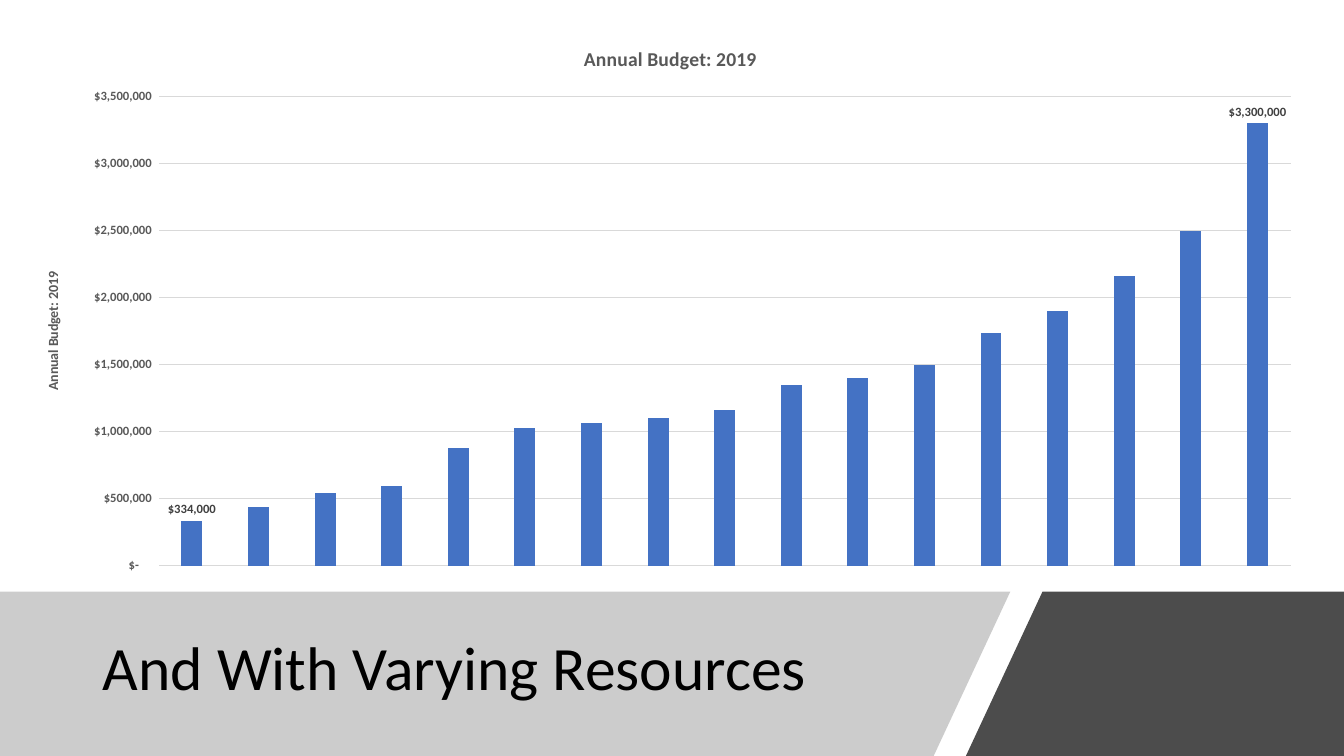
"""Build a slide with a column chart of annual budgets above a slanted title band."""
import lxml.etree
import pptx
import pptx.chart.data
import pptx.dml.color
import pptx.enum.chart
import pptx.enum.text
import pptx.oxml
import pptx.oxml.ns
import pptx.util

THEME = {
    "font": "Calibri",
    "title": "000000", "heading": "595959", "label": "404040",
    "grid": "D9D9D9", "bar": "4472C4", "light": "808080", "dark": "000000",
    "title_pt": 44, "heading_pt": 14, "axis_title_pt": 10, "tick_pt": 9,
}
RGB = pptx.dml.color.RGBColor.from_string
MONEY = r'_("$"* #,##0_);_("$"* \(#,##0\);_("$"* "-"??_);_(@_)'


def style(font, size, color, bold=False):
    font.name = THEME["font"]
    font.size = pptx.util.Pt(size)
    font.bold = bold
    font.color.rgb = RGB(color)


def write(tf, text, size, color, bold=False, align=None, spacing=None):
    p = tf.paragraphs[0]
    p.alignment = align
    p.line_spacing = spacing
    r = p.add_run()
    r.text = text
    style(r.font, size, color, bold)


prs = pptx.Presentation()
prs.slide_width = pptx.util.Inches(13.33)
prs.slide_height = pptx.util.Inches(7.5)
COL, ROW = prs.slide_width / 100, prs.slide_height / 100
s = prs.slides.add_slide(prs.slide_layouts[5])

TOP = 78.27
bands = [
    ("light", 40, [(0, TOP), (75.17, TOP), (69.47, 100), (0, 100)]),
    ("dark", 70, [(77.57, TOP), (100, TOP), (100, 100), (71.87, 100)]),
]
shapes = []
for color, opacity, corners in bands:
    points = [(int(x * COL), int(y * ROW)) for x, y in corners]
    builder = s.shapes.build_freeform(*points[0])
    builder.add_line_segments(points[1:], close=True)
    sp = builder.convert_to_shape()
    sp.shadow.inherit = False
    sp.line.fill.background()
    sp.fill.solid()
    sp.fill.fore_color.rgb = RGB(THEME[color])
    clr = sp.element.xpath("./p:spPr/a:solidFill/a:srgbClr")[0]
    alpha = lxml.etree.SubElement(clr, pptx.oxml.ns.qn("a:alpha"))
    alpha.set("val", str(opacity * 1000))
    shapes.append(sp)

title = s.shapes.title
title.left, title.top = int(6.9 * COL), int(80.67 * ROW)
title.width, title.height = int(63.32 * COL), int(16 * ROW)
tf = title.text_frame
tf.word_wrap = True
tf.vertical_anchor = pptx.enum.text.MSO_ANCHOR.MIDDLE
write(tf, "And With Varying Resources", THEME["title_pt"], THEME["title"],
      align=pptx.enum.text.PP_ALIGN.LEFT, spacing=0.9)
shapes[0].element.addnext(title.element)

budgets = [334, 435, 545, 595, 880, 1025, 1064, 1100, 1162,
           1347, 1400, 1500, 1734, 1900, 2159, 2500, 3300]
data = pptx.chart.data.CategoryChartData(number_format=MONEY)
data.categories = [str(n + 1) for n in range(len(budgets))]
data.add_series("Annual Budget: 2019", [1000 * b for b in budgets])
chart = s.shapes.add_chart(
    pptx.enum.chart.XL_CHART_TYPE.COLUMN_CLUSTERED,
    int(1.8 * COL), int(3.33 * ROW), int(96.17 * COL), int(73.87 * ROW), data).chart
style(chart.font, THEME["axis_title_pt"], THEME["title"])
chart.has_legend = False
chart.has_title = True
chart.chart_title.include_in_layout = False
write(chart.chart_title.text_frame, "Annual Budget: 2019",
      THEME["heading_pt"], THEME["heading"], bold=True)

chart.category_axis.visible = False
axis = chart.value_axis
axis.minimum_scale, axis.maximum_scale, axis.major_unit = 0, 3500000, 500000
axis.major_tick_mark = pptx.enum.chart.XL_TICK_MARK.NONE
axis.format.line.fill.background()
axis.major_gridlines.format.line.color.rgb = RGB(THEME["grid"])
axis.major_gridlines.format.line.width = pptx.util.Pt(0.75)
axis.tick_labels.number_format = MONEY
axis.tick_labels.number_format_is_linked = False
style(axis.tick_labels.font, THEME["tick_pt"], THEME["heading"], bold=True)
axis.has_title = True
write(axis.axis_title.text_frame, "Annual Budget: 2019",
      THEME["axis_title_pt"], THEME["heading"], bold=True)

plot = chart.plots[0]
plot.gap_width, plot.overlap, plot.vary_by_categories = 219, -27, False
series = plot.series[0]
series.format.fill.solid()
series.format.fill.fore_color.rgb = RGB(THEME["bar"])
series.data_labels.show_value = False
for n in (0, len(budgets) - 1):
    label = series.points[n].data_label
    style(label.font, THEME["tick_pt"], THEME["label"], bold=True)
    label.position = pptx.enum.chart.XL_LABEL_POSITION.OUTSIDE_END

area = chart.element.xpath("./c:chart/c:plotArea")[0]
for old in area.xpath("./c:layout"):
    area.remove(old)
sides = {"layoutTarget": "inner", "xMode": "edge", "yMode": "edge",
         "x": 0.104, "y": 0.128, "w": 0.876, "h": 0.84}
inner = "".join(f'<c:{tag} val="{val}"/>' for tag, val in sides.items())
area.insert(0, pptx.oxml.parse_xml(
    f'<c:layout {pptx.oxml.ns.nsdecls("c")}><c:manualLayout>{inner}</c:manualLayout></c:layout>'))

prs.save("out.pptx")
